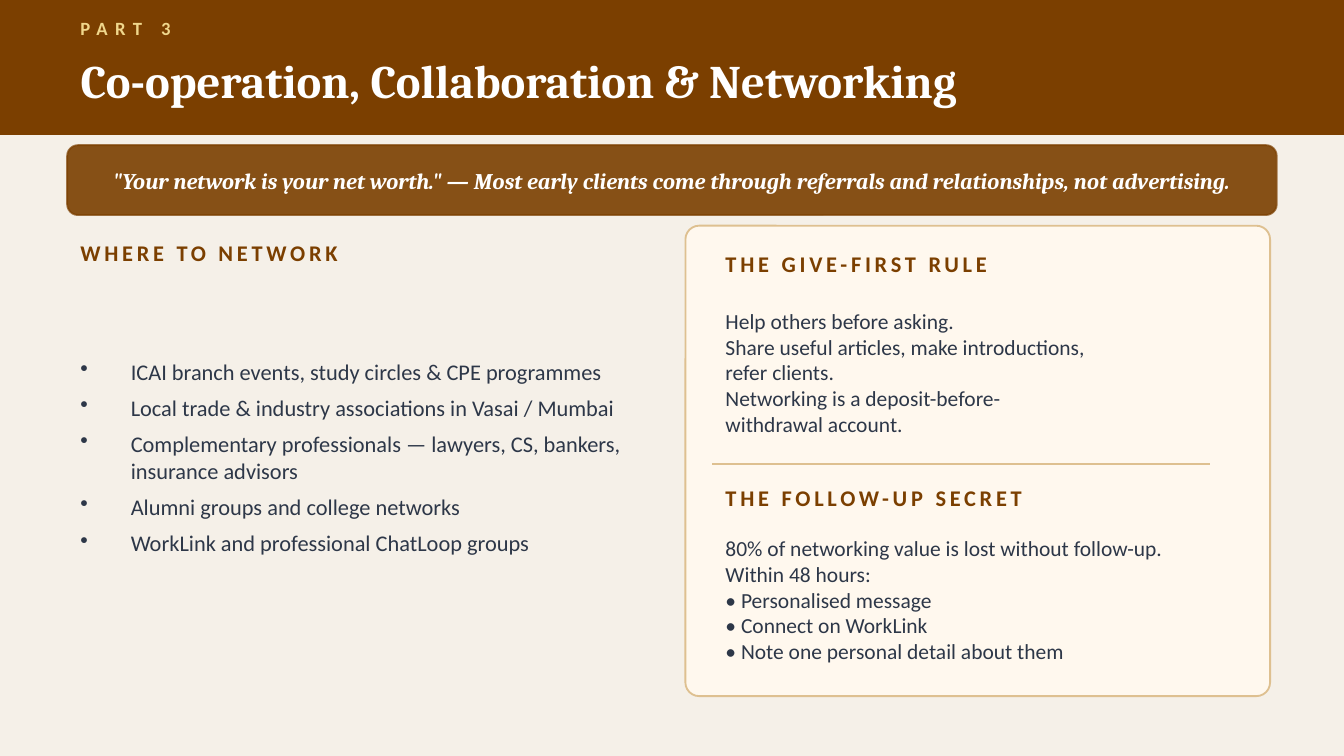
import pptx
import pptx.util
import pptx.dml.color
import pptx.enum.shapes
import pptx.enum.text
import pptx.oxml
import pptx.oxml.ns

Inches, Pt = pptx.util.Inches, pptx.util.Pt
SHAPE = pptx.enum.shapes.MSO_SHAPE
ALIGN = pptx.enum.text.PP_ALIGN
NS = pptx.oxml.ns.nsdecls("a")

COLORS = {
    "brown": "7B3F00",
    "gold": "F0D78C",
    "tan": "DEC090",
    "cream": "FFF8EE",
    "paper": "F5F0E8",
    "ink": "2D3748",
    "white": "FFFFFF",
}

PART = "PART 3"
TITLE = "Co-operation, Collaboration & Networking"
QUOTE = ('"Your network is your net worth." — Most early clients come through '
         "referrals and relationships, not advertising.")
PLACES = [
    "ICAI branch events, study circles & CPE programmes",
    "Local trade & industry associations in Vasai / Mumbai",
    "Complementary professionals — lawyers, CS, bankers, insurance advisors",
    "Alumni groups and college networks",
    "WorkLink and professional ChatLoop groups",
]
GIVE_FIRST = [
    "Help others before asking.",
    "Share useful articles, make introductions,",
    "refer clients.",
    "Networking is a deposit-before-",
    "withdrawal account.",
]
FOLLOW_UP = [
    "80% of networking value is lost without follow-up.",
    "Within 48 hours:",
    "• Personalised message",
    "• Connect on WorkLink",
    "• Note one personal detail about them",
]
LEFT, LEFT_W = 0.5, 4.3
RIGHT, RIGHT_W = 5.3, 3.9
SECTIONS = [
    ("WHERE TO NETWORK", LEFT, 1.72, LEFT_W, 0.32, PLACES, 2.05, 2.7, 12, True),
    ("THE GIVE-FIRST RULE", RIGHT, 1.8, RIGHT_W, 0.32, GIVE_FIRST, 2.12, 1.3, 11.5, False),
    ("THE FOLLOW-UP SECRET", RIGHT, 3.55, RIGHT_W, 0.3, FOLLOW_UP, 3.85, 1.22, 11.5, False),
]
BANNER = (0.5, 1.08, 9, 0.52)


def rgb(name):
    return pptx.dml.color.RGBColor.from_string(COLORS[name])


def set_alpha(fill, percent):
    color = fill._xPr.find(".//" + pptx.oxml.ns.qn("a:srgbClr"))
    color.append(pptx.oxml.parse_xml(f'<a:alpha {NS} val="{percent * 1000}"/>'))


def add_panel(s, kind, box, fill, line, radius=None):
    sp = s.shapes.add_shape(kind, *map(Inches, box))
    sp.shadow.inherit = False
    sp.fill.solid()
    sp.fill.fore_color.rgb = rgb(fill)
    sp.line.color.rgb = rgb(line)
    sp.line.width = Pt(1)
    if radius is not None:
        sp.adjustments[0] = radius
    return sp


def add_bullet(p):
    pPr = p._p.get_or_add_pPr()
    pPr.set("marL", str(Pt(27)))
    pPr.set("indent", str(-Pt(27)))
    p.space_after = Pt(5)
    pPr.append(pptx.oxml.parse_xml(f'<a:buSzPct {NS} val="100000"/>'))
    pPr.append(pptx.oxml.parse_xml(f'<a:buChar {NS} char="•"/>'))


def write(sp, lines, size, color, font="Calibri", bold=False, italic=False,
          spacing=0, align=ALIGN.LEFT, bullets=False):
    tf = sp.text_frame
    tf.text = "\n".join(lines)
    tf.word_wrap = True
    tf.auto_size = pptx.enum.text.MSO_AUTO_SIZE.NONE
    tf.vertical_anchor = pptx.enum.text.MSO_ANCHOR.MIDDLE
    for p in tf.paragraphs:
        p.alignment = align
        if bullets:
            add_bullet(p)
        for r in p.runs:
            r.font.name = font
            r.font.size = Pt(size)
            r.font.bold = bold
            r.font.italic = italic
            r.font.color.rgb = rgb(color)
            if spacing:
                r._r.get_or_add_rPr().set("spc", str(spacing * 100))


def add_text(s, box, lines, size, color, **style):
    sp = s.shapes.add_textbox(*map(Inches, box))
    write(sp, lines, size, color, **style)
    return sp


def add_divider(s, x1, x2, y):
    line = s.shapes.add_connector(pptx.enum.shapes.MSO_CONNECTOR.STRAIGHT,
                                  *map(Inches, (x1, y, x2, y)))
    line.line.color.rgb = rgb("tan")
    line.line.width = Pt(1)
    line.element.spPr.append(pptx.oxml.parse_xml(f"<a:effectLst {NS}/>"))
    line.element.remove(line.element.find(pptx.oxml.ns.qn("p:style")))


def main():
    prs = pptx.Presentation()
    prs.slide_width, prs.slide_height = Inches(10), Inches(10 * 9 / 16)
    s = prs.slides.add_slide(prs.slide_layouts[5])
    s.background.fill.solid()
    s.background.fill.fore_color.rgb = rgb("paper")

    header = add_panel(s, SHAPE.RECTANGLE, (0, 0, 10, 1), "brown", "brown")
    part = add_text(s, (0.5, 0.06, 2, 0.3), [PART], 10, "gold", bold=True, spacing=4)
    title = s.shapes.title
    title.left, title.top, title.width, title.height = map(Inches, (0.5, 0.32, 9, 0.55))
    write(title, [TITLE], 25, "white", font="Cambria", bold=True)
    title.element.addprevious(header.element)
    title.element.addprevious(part.element)

    banner = add_panel(s, SHAPE.ROUNDED_RECTANGLE, BANNER, "brown", "brown", 0.154)
    set_alpha(banner.fill, 90)
    set_alpha(banner.line.fill, 70)
    quote = add_text(s, BANNER, [QUOTE], 12, "white", font="Cambria", bold=True,
                     italic=True, align=ALIGN.CENTER)
    tf = quote.text_frame
    tf.margin_left = tf.margin_right = tf.margin_top = tf.margin_bottom = 0

    add_panel(s, SHAPE.ROUNDED_RECTANGLE, (5.1, 1.68, 4.35, 3.5), "cream", "tan", 0.029)
    add_divider(s, RIGHT, 9, 3.45)
    for heading, x, y, w, h, lines, body_y, body_h, size, bullets in SECTIONS:
        add_text(s, (x, y, w, h), [heading], 12, "brown", bold=True, spacing=2)
        add_text(s, (x, body_y, w, body_h), lines, size, "ink", bullets=bullets)

    prs.save("out.pptx")


if __name__ == "__main__":
    main()
